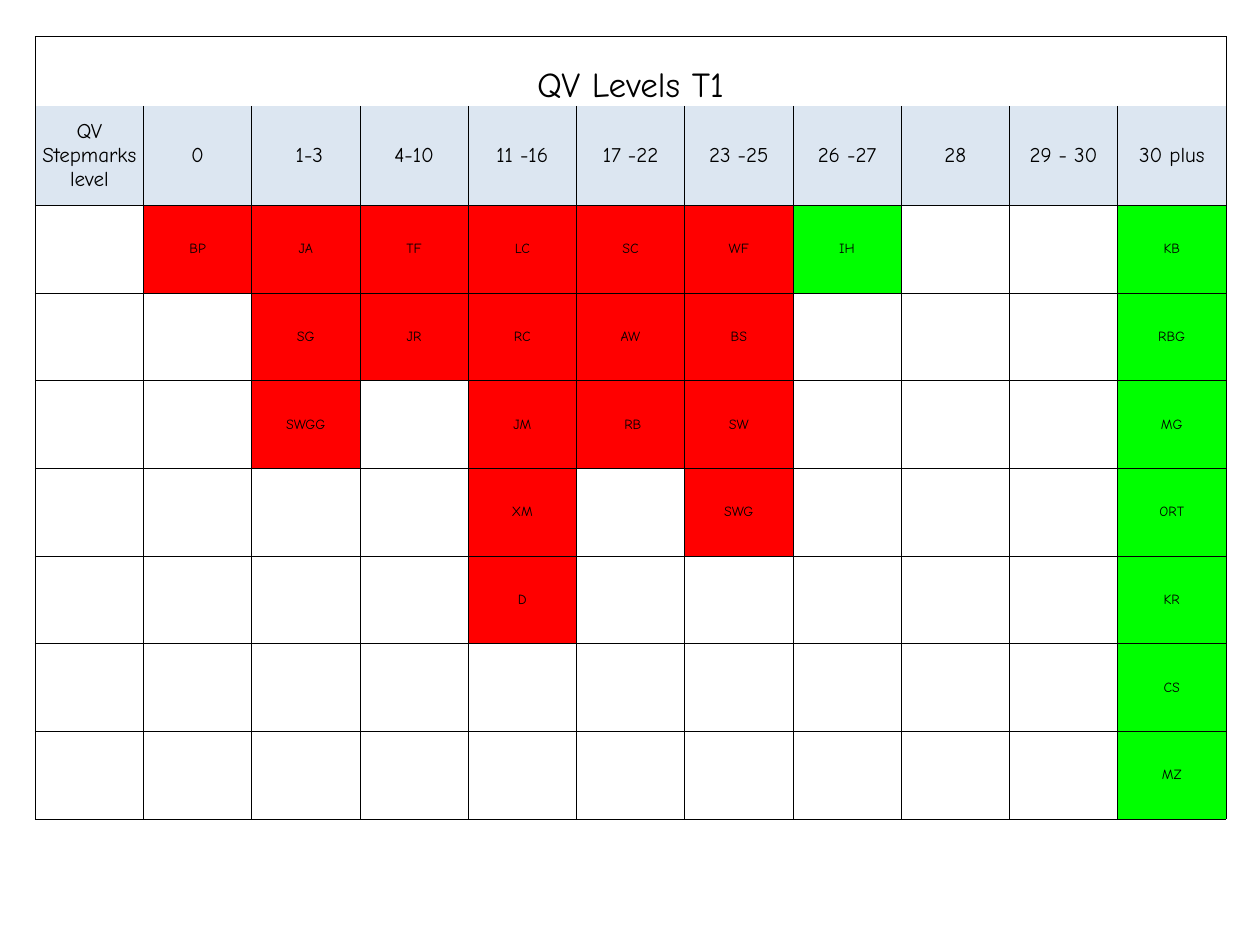
from dataclasses import dataclass

from lxml import etree
from pptx import Presentation
from pptx.dml.color import RGBColor
from pptx.enum.text import MSO_ANCHOR, PP_ALIGN
from pptx.oxml.ns import qn
from pptx.util import Inches, Pt

CENTER = PP_ALIGN.CENTER
MIDDLE, BOTTOM = MSO_ANCHOR.MIDDLE, MSO_ANCHOR.BOTTOM


@dataclass(frozen=True)
class Theme:
    font: str = "Comic Neue"
    ink: str = "000000"
    header: str = "DCE6F1"
    below: str = "FF0000"
    reached: str = "00FF00"
    title_size: int = 20
    header_size: int = 12
    pupil_size: int = 8
    border_width: float = 0.5


THEME = Theme()

# Each level with the pupils who are on it, from top to bottom
LEVELS = [
    ("QV Stepmarks level", []),
    ("0", ["BP"]),
    (" 1-3", ["JA", "SG", "SWGG"]),
    ("4-10", ["TF", "JR"]),
    ("11 -16", ["LC", "RC", "JM", "XM", "D"]),
    ("17 -22", ["SC", "AW", " RB"]),
    ("23 -25", ["WF", "BS", "SW", "SWG"]),
    ("26 -27", ["IH"]),
    ("28", []),
    ("29 - 30", []),
    ("30 plus", ["KB", "RBG", "MG", "ORT", "KR", "CS", "MZ"]),
]
FIRST_REACHED = 7
PUPIL_ROWS = 7
TITLE_HEIGHT, HEADER_HEIGHT = 0.55, 0.79
LEFT, TOP, WIDTH, HEIGHT = 0.28, 0.29, 9.45, 6.21


def set_borders(cell, visible):
    """Draw the sides named in visible (letters of LRTB) and hide the others."""
    properties = cell._tc.get_or_add_tcPr()
    for side in "LRTB":
        line = etree.SubElement(properties, qn(f"a:ln{side}"), w=str(Pt(THEME.border_width)))
        if side in visible:
            fill = etree.SubElement(line, qn("a:solidFill"))
            etree.SubElement(fill, qn("a:srgbClr"), val=THEME.ink)
        else:
            etree.SubElement(line, qn("a:noFill"))


def write_cell(cell, text, *, size, fill=None, anchor=MIDDLE, borders="LRTB"):
    cell.margin_left = cell.margin_right = cell.margin_top = cell.margin_bottom = 0
    cell.vertical_anchor = anchor
    set_borders(cell, borders)
    if fill:
        cell.fill.solid()
        cell.fill.fore_color.rgb = RGBColor.from_string(fill)
    else:
        cell.fill.background()
    para = cell.text_frame.paragraphs[0]
    para.alignment = CENTER
    para.font.size = Pt(size)
    if text:
        span = para.add_run()
        span.text = text
        span.font.name = THEME.font
        span.font.size = Pt(size)
        span.font.color.rgb = RGBColor.from_string(THEME.ink)


deck = Presentation()
deck.slide_width, deck.slide_height = Inches(10), Inches(7.5)
page = deck.slides.add_slide(deck.slide_layouts[6])

table = page.shapes.add_table(
    PUPIL_ROWS + 2, len(LEVELS), Inches(LEFT), Inches(TOP), Inches(WIDTH), Inches(HEIGHT)
).table
table.first_row = table.horz_banding = False
for column in table.columns:
    column.width = Inches(WIDTH / len(LEVELS))
pupil_height = (HEIGHT - TITLE_HEIGHT - HEADER_HEIGHT) / PUPIL_ROWS
row_heights = [TITLE_HEIGHT, HEADER_HEIGHT] + [pupil_height] * PUPIL_ROWS
for row, height in zip(table.rows, row_heights):
    row.height = Inches(height)

table.cell(0, 0).merge(table.cell(0, len(LEVELS) - 1))
for index, (level, pupils) in enumerate(LEVELS):
    write_cell(table.cell(0, index), "" if index else "QV Levels T1",
               size=THEME.title_size, anchor=BOTTOM, borders="LRT")
    write_cell(table.cell(1, index), level, size=THEME.header_size,
               fill=THEME.header, borders="LRB")
    level_fill = THEME.reached if index >= FIRST_REACHED else THEME.below
    for position in range(PUPIL_ROWS):
        pupil = pupils[position] if position < len(pupils) else ""
        write_cell(table.cell(position + 2, index), pupil, size=THEME.pupil_size,
                   fill=level_fill if pupil else None)

deck.save("out.pptx")
